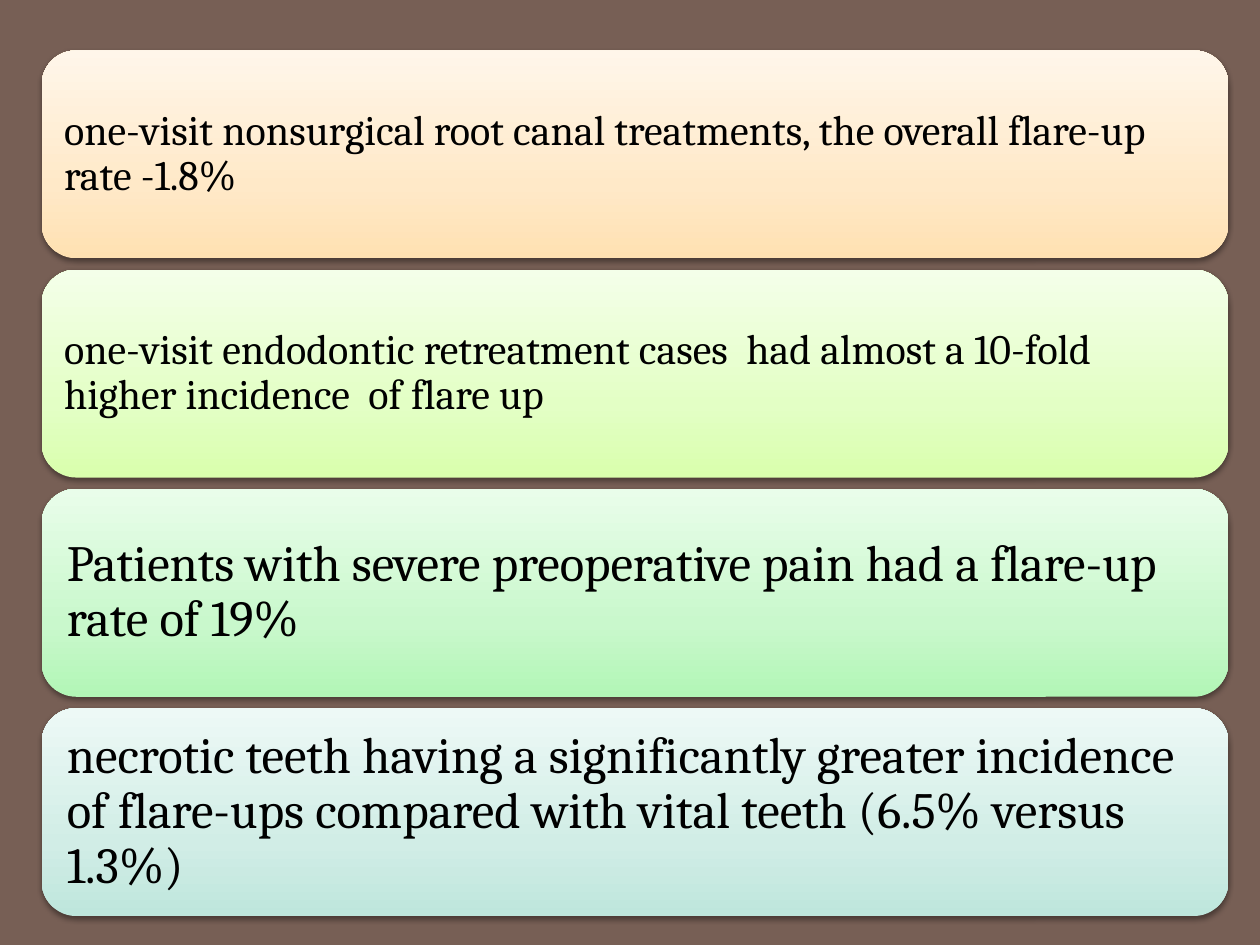
import pptx
import pptx.dml.color
import pptx.enum.shapes
import pptx.enum.text
import pptx.oxml
import pptx.oxml.ns
import pptx.util

COLOURS = {
    "background": "775F55",
    "text": "000000",
    "shadow": "000000",
    "orange": ("FFE1B2", "FFE9C8", "FFF6EA"),
    "lime": ("D9FFAD", "E3FFC5", "F4FFE9"),
    "green": ("B2F6B6", "C9F8CC", "E9FDEA"),
    "teal": ("BEE6DC", "D1EDE6", "EDF9F6"),
}
GRADIENT_STOPS = (0, 35, 100)
FINDINGS = [
    ("orange", 24, 0.1, "one-visit nonsurgical root canal treatments, the overall flare-up rate -1.8%"),
    ("lime", 24, 0.1, "one-visit endodontic retreatment cases  had almost a 10-fold higher incidence  of flare up"),
    ("green", 29, 0.12, "Patients with severe preoperative pain had a flare-up rate of 19%"),
    ("teal", 29, 0.12, "necrotic teeth having a significantly greater incidence of flare-ups "
                       "compared with vital teeth (6.5% versus 1.3%)"),
]
LIST_BOX = (0.33, 0.4, 9.42, 6.87)
GAP = 0.09


def set_values(target, values):
    """Set each named attribute of the target."""
    for name, value in values.items():
        setattr(target, name, value)


def rgb(name):
    """Return the colour with this name."""
    return pptx.dml.color.RGBColor.from_string(COLOURS[name])


def fill_gradient(shape, colours):
    """Fill the shape with a gradient that rises from its lower edge."""
    stops = "".join(
        f'<a:gs pos="{position * 1000}"><a:srgbClr val="{colour}"/></a:gs>'
        for position, colour in zip(GRADIENT_STOPS, colours)
    )
    gradient = pptx.oxml.parse_xml(
        f'<a:gradFill {pptx.oxml.ns.nsdecls("a")} rotWithShape="1"><a:gsLst>{stops}</a:gsLst>'
        '<a:lin ang="16200000" scaled="0"/></a:gradFill>'
    )
    shape.fill.background()
    properties = shape._element.spPr
    properties.replace(properties.find(pptx.oxml.ns.qn("a:noFill")), gradient)


def add_soft_shadow(shape):
    """Give the shape a faint shadow straight below it."""
    shape.shadow.inherit = False
    effects = shape._element.spPr.find(pptx.oxml.ns.qn("a:effectLst"))
    effects.append(pptx.oxml.parse_xml(
        f'<a:outerShdw {pptx.oxml.ns.nsdecls("a")} blurRad="{pptx.util.Pt(3.1)}" '
        f'dist="{pptx.util.Pt(1.6)}" dir="5400000" rotWithShape="0">'
        f'<a:srgbClr val="{COLOURS["shadow"]}"><a:alpha val="38000"/></a:srgbClr></a:outerShdw>'
    ))


def add_finding(slide, box, colour, size, margin, text):
    """Place one rounded panel with its text in the box."""
    shape = slide.shapes.add_shape(
        pptx.enum.shapes.MSO_SHAPE.ROUNDED_RECTANGLE, *map(pptx.util.Inches, box)
    )
    fill_gradient(shape, COLOURS[colour])
    shape.line.fill.background()
    add_soft_shadow(shape)
    frame = shape.text_frame
    set_values(frame, {"word_wrap": True, "vertical_anchor": pptx.enum.text.MSO_ANCHOR.MIDDLE})
    set_values(frame, {f"margin_{side}": pptx.util.Inches(margin)
                       for side in ("left", "top", "right", "bottom")})
    paragraph = frame.paragraphs[0]
    set_values(paragraph, {"text": text, "line_spacing": 0.9,
                           "alignment": pptx.enum.text.PP_ALIGN.LEFT})
    font = paragraph.runs[0].font
    set_values(font, {"name": "Cambria", "size": pptx.util.Pt(size)})
    font.color.rgb = rgb("text")


def add_findings(slide, box):
    """Stack the findings in equal rows within the box."""
    left, top, width, height = box
    row_height = (height - GAP * (len(FINDINGS) - 1)) / len(FINDINGS)
    for row, finding in enumerate(FINDINGS):
        row_top = top + row * (row_height + GAP)
        add_finding(slide, (left, row_top, width, row_height), *finding)


def main():
    """Build and save the presentation."""
    presentation = pptx.Presentation()
    set_values(presentation, {"slide_width": pptx.util.Inches(10),
                              "slide_height": pptx.util.Inches(7.5)})
    slide = presentation.slides.add_slide(presentation.slide_layouts[6])
    slide.background.fill.solid()
    slide.background.fill.fore_color.rgb = rgb("background")
    add_findings(slide, LIST_BOX)
    presentation.save("out.pptx")


if __name__ == "__main__":
    main()
